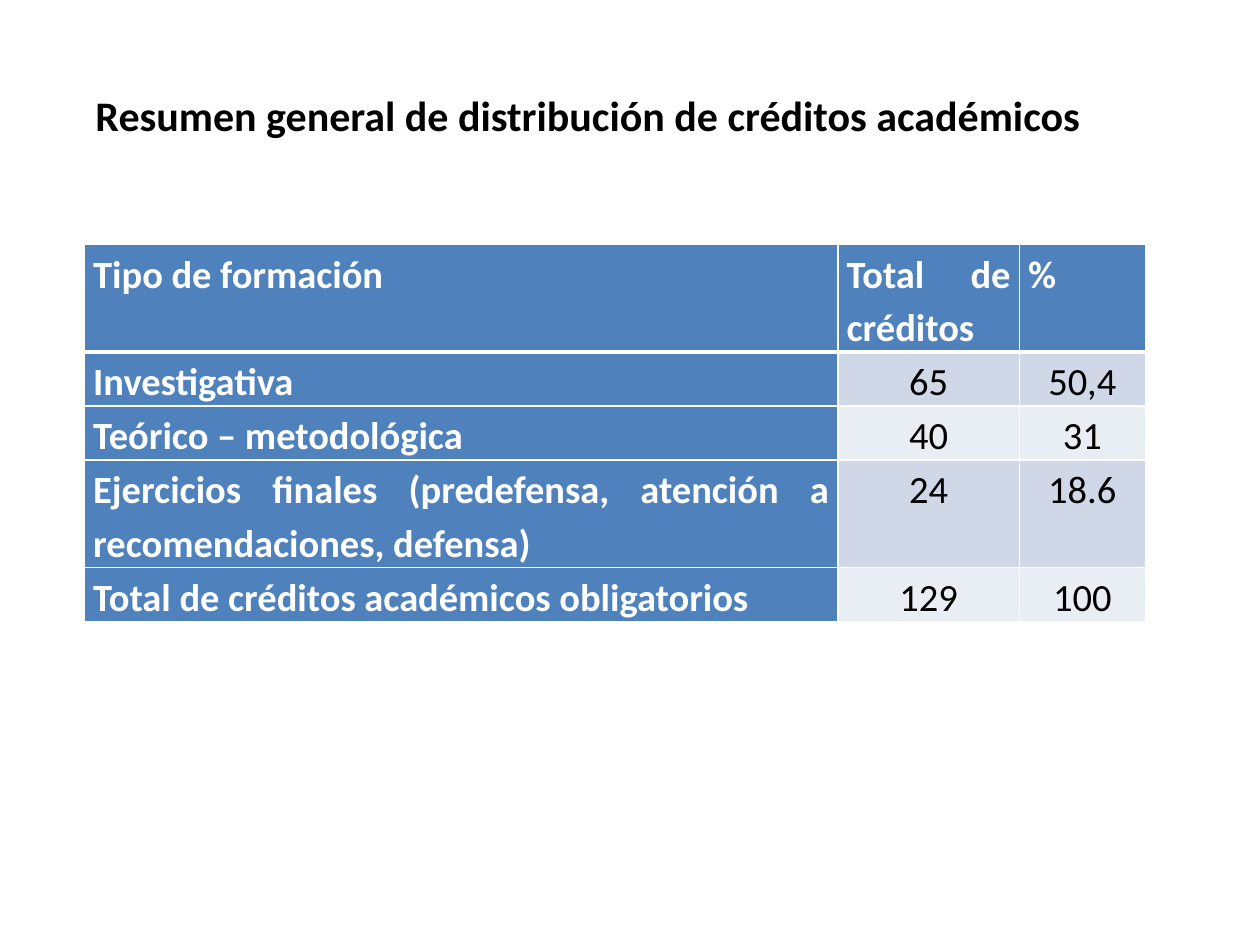
from pptx import Presentation, util as u
from pptx.dml.color import RGBColor
from pptx.enum import text
from lxml import etree

TITLE = "Resumen general de distribución de créditos académicos"
ROWS = [
    ("Tipo de formación", "Total de créditos", "%"),
    ("Investigativa", "65", "50,4"),
    ("Teórico – metodológica", "40", "31"),
    ("Ejercicios finales (predefensa, atención a recomendaciones, defensa)",
     "24", "18.6"),
    ("Total de créditos académicos obligatorios", "129", "100"),
]
COLS = [5.98, 1.44, 1]
LINES = [2, 1, 1, 2, 1]
STEP = 0.42
HEAD, BANDS = "4F81BD", ("E9EDF4", "D0D8E8")
NS = "http://schemas.openxmlformats.org/drawingml/2006/main"


def paint(hue):
    return RGBColor.from_string(hue)


def write(frame, words, size, hue, bold, align):
    frame.text = words
    para = frame.paragraphs[0]
    para.alignment = align
    para.line_spacing = 1.15
    font = para.runs[0].font
    font.name, font.size, font.bold = "Calibri", u.Pt(size), bold
    font.color.rgb = paint(hue)
    return para


def edge(cell, head):
    props = cell._tc.get_or_add_tcPr()
    for spot, side in enumerate("LRTB"):
        thick = head and side == "B"
        line = etree.Element(f"{{{NS}}}ln{side}", w=str(u.Pt(3 if thick else 1)))
        fill = etree.SubElement(line, f"{{{NS}}}solidFill")
        etree.SubElement(fill, f"{{{NS}}}srgbClr", val="FFFFFF")
        props.insert(spot, line)


deck = Presentation()
deck.slide_width, deck.slide_height = u.Inches(10), u.Inches(7.5)
slide = deck.slides.add_slide(deck.slide_layouts[6])

grid = slide.shapes.add_table(
    len(ROWS), len(COLS), u.Inches(0.67), u.Inches(1.94),
    u.Inches(sum(COLS)), u.Inches(STEP * sum(LINES))).table
for col, wide in zip(grid.columns, COLS):
    col.width = u.Inches(wide)
for row, count in zip(grid.rows, LINES):
    row.height = u.Inches(STEP * count)

for r, row in enumerate(ROWS):
    for c, words in enumerate(row):
        cell = grid.cell(r, c)
        head = r == 0 or c == 0
        cell.margin_left = cell.margin_right = u.Inches(0.07)
        cell.margin_top = cell.margin_bottom = 0
        cell.fill.solid()
        cell.fill.fore_color.rgb = paint(HEAD if head else BANDS[r % 2])
        edge(cell, r == 0)
        write(cell.text_frame, words, 22, "FFFFFF" if head else "000000", head,
              text.PP_ALIGN.JUSTIFY if head else text.PP_ALIGN.CENTER)

box = slide.shapes.add_textbox(
    u.Inches(0.66), u.Inches(0.6), u.Inches(8.6), u.Inches(0.57))
frame = box.text_frame
frame.word_wrap = True
frame.auto_size = text.MSO_AUTO_SIZE.SHAPE_TO_FIT_TEXT
title = write(frame, TITLE, 24, "000000", True, text.PP_ALIGN.JUSTIFY)
title.space_after = u.Pt(6)

deck.save("out.pptx")
